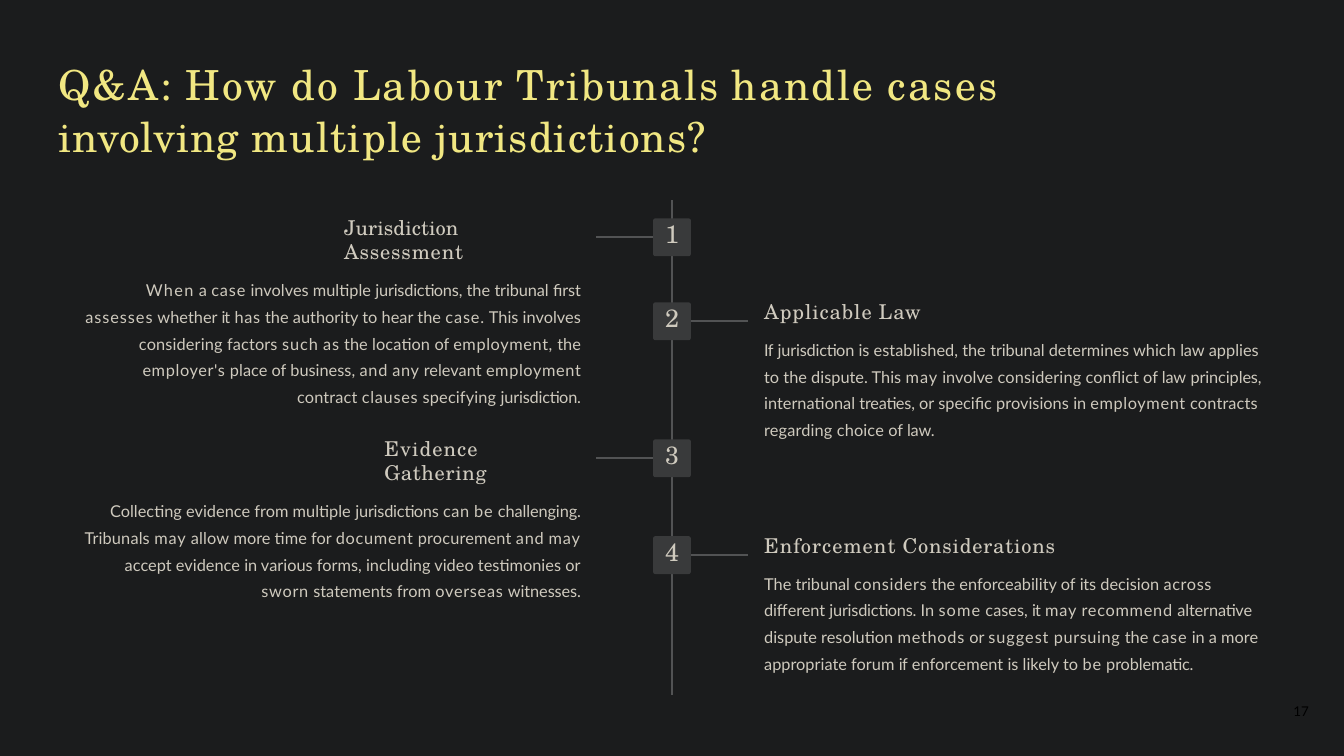
from dataclasses import dataclass
from itertools import groupby

from pptx import Presentation
from pptx.dml.color import RGBColor
from pptx.enum.shapes import MSO_CONNECTOR as Connector, MSO_SHAPE as Shape
from pptx.enum.text import MSO_ANCHOR as Anchor, PP_ALIGN as Align
from pptx.oxml import parse_xml
from pptx.oxml.ns import nsdecls
from pptx.util import Pt


@dataclass(frozen=True)
class TextStyle:
    font: str
    size: float
    color: str


@dataclass(frozen=True)
class Theme:
    background: str = "1B1C1D"
    line: str = "525354"
    node: str = "393A3B"
    title: TextStyle = TextStyle("TeX Gyre Schola", 35.5, "F1E782")
    number: TextStyle = TextStyle("TeX Gyre Schola", 21.5, "CFCABE")
    heading: TextStyle = TextStyle("TeX Gyre Schola", 17.5, "CFCABE")
    body: TextStyle = TextStyle("Lato", 14, "CFCABE")
    page: TextStyle = TextStyle("Lato", 11.5, "000000")


@dataclass(frozen=True)
class Topic:
    number: str
    top: float
    on_left: bool
    heading: str
    body: str
    closing: str = ""  # last line, set as its own paragraph
    heading_indent: float = 0
    first_indent: float = 0


THEME = Theme()
WIDTH, HEIGHT = 1152, 648
SPINE_X, SPINE_TOP, SPINE_BOTTOM = 576, 171.4, 595.4
NODE, BRANCH_REACH = 32.4, 64.8
TEXT_GAP, TEXT_WIDTH = 78, 438

TOPICS = [
    Topic("1", 187.2, True, "Jurisdiction Assessment",
          "When a case involves multiple jurisdictions, the tribunal first assesses whether "
          "it has the authority to hear the case. This involves considering factors such as "
          "the location of employment, the employer's place of business, and any relevant "
          "employment",
          "contract clauses specifying jurisdiction.", 235, 49.7),
    Topic("2", 259.2, False, "Applicable Law",
          "If jurisdiction is established, the tribunal determines which law applies to the "
          "dispute. This may involve considering conflict of law principles, international "
          "treaties, or specific provisions in employment contracts regarding choice of law."),
    Topic("3", 376.6, True, "Evidence Gathering",
          "Collecting evidence from multiple jurisdictions can be challenging. Tribunals may "
          "allow more time for document procurement and may accept evidence in various forms, "
          "including video testimonies or",
          "sworn statements from overseas witnesses.", 269.5, 10.8),
    Topic("4", 459.6, False, "Enforcement Considerations",
          "The tribunal considers the enforceability of its decision across different "
          "jurisdictions. In some cases, it may recommend alternative dispute resolution "
          "methods or suggest pursuing the case in a more appropriate forum if enforcement "
          "is likely to be problematic."),
]


def by_word(groups: dict[float, str]) -> dict[str, float]:
    return {word: value for value, words in groups.items() for word in words.split()}


# Letter spacing in points, by word
TITLE_TRACKING = by_word({
    0.7: "involving", 1: "jurisdictions", 1.1: "multiple", 1.4: "Tribunals",
    1.7: "Q&A", 1.8: "handle", 2: "Labour", 2.2: "How cases", 2.4: "do"})
TEXT_TRACKING = by_word({
    -0.9: "it", -0.6: "If if", -0.2: "jurisdictions jurisdiction law treaties in its",
    -0.1: "tribunal first principles challenging different alternative witnesses problematic",
    0.1: "Jurisdiction considering factors location contract specifying contracts regarding "
         "choice Tribunals allow procurement",
    0.5: "employment employer's any can considers across pursuing",
    0.6: "has and clauses document sworn overseas recommend methods Gathering",
    0.7: "case as may be Assessment Considerations",
    0.8: "assesses such suggest Applicable", 0.9: "some Evidence Law Enforcement", 1.1: "When"})


def add_words(paragraph, text: str, style: TextStyle, tracking: dict[str, float]) -> None:
    """Write text as runs of one letter spacing; the gaps between words have none."""
    pieces = [piece for word in text.split() for piece in (word, " ")][:-1]
    for spacing, group in groupby(pieces, lambda piece: tracking.get(piece.strip(".,:?"), 0)):
        run = paragraph.add_run()
        run.text = "".join(group)
        run.font.color.rgb = RGBColor.from_string(style.color)
        for name, value in {"name": style.font, "size": Pt(style.size)}.items():
            setattr(run.font, name, value)
        run._r.get_or_add_rPr().set("spc", str(round(spacing * 100)))


def format_paragraph(paragraph, formats: dict, left: float = 0, right: float = 0,
                     first: float = 0) -> None:
    for name, value in formats.items():
        setattr(paragraph, name, value)
    for name, value in {"marL": left, "marR": right, "indent": first}.items():
        paragraph._p.get_or_add_pPr().set(name, str(int(Pt(value))))


def set_frame(shape, **formats):
    frame = shape.text_frame
    defaults = {"word_wrap": True, "margin_left": 0, "margin_top": Pt(0.7),
                "margin_right": 0, "margin_bottom": 0}
    for name, value in (defaults | formats).items():
        setattr(frame, name, value)
    return frame


def add_text_box(slide, left: float, top: float, width: float, height: float):
    return set_frame(slide.shapes.add_textbox(Pt(left), Pt(top), Pt(width), Pt(height)))


def add_block(slide, kind: Shape, left: float, top: float, width: float, height: float,
              color: str):
    block = slide.shapes.add_shape(kind, Pt(left), Pt(top), Pt(width), Pt(height))
    block.shadow.inherit = False
    block.fill.solid()
    block.fill.fore_color.rgb = RGBColor.from_string(color)
    block.line.fill.background()
    return block


def add_line(slide, start: tuple[float, float], end: tuple[float, float], width: float):
    line = slide.shapes.add_connector(Connector.STRAIGHT, *(Pt(n) for n in start + end))
    line.line.color.rgb = RGBColor.from_string(THEME.line)
    line.line.width = Pt(width)
    line._element.spPr.append(parse_xml(f"<a:effectLst {nsdecls('a')}/>"))
    return line


def add_node(slide, topic: Topic) -> None:
    """Numbered square with its branch line."""
    node = add_block(slide, Shape.ROUNDED_RECTANGLE, SPINE_X - NODE / 2, topic.top,
                     NODE, NODE, THEME.node)
    node.adjustments[0] = 0.06
    frame = set_frame(node, vertical_anchor=Anchor.MIDDLE, margin_bottom=Pt(6.5))
    format_paragraph(frame.paragraphs[0], {"alignment": Align.CENTER})
    add_words(frame.paragraphs[0], topic.number, THEME.number, {})

    side = -1 if topic.on_left else 1
    middle = topic.top + NODE / 2
    branch = add_line(slide, (SPINE_X + side * NODE / 2, middle),
                      (SPINE_X + side * BRANCH_REACH, middle), 2)
    branch.begin_connect(node, 1 if topic.on_left else 3)


def add_topic_text(slide, topic: Topic) -> None:
    left = SPINE_X - TEXT_GAP - TEXT_WIDTH if topic.on_left else SPINE_X + TEXT_GAP + 1
    frame = add_text_box(slide, left, topic.top - 3.6, TEXT_WIDTH,
                         146 if topic.number == "1" else 123)
    alignment = Align.RIGHT if topic.on_left else Align.LEFT
    heading = frame.paragraphs[0]
    format_paragraph(heading, {"alignment": Align.LEFT}, left=topic.heading_indent,
                     right=40 if topic.on_left else 0)
    add_words(heading, topic.heading, THEME.heading, TEXT_TRACKING)

    body = frame.add_paragraph()
    format_paragraph(body, {"alignment": alignment, "line_spacing": 1.36,
                            "space_before": Pt(8.2)}, first=topic.first_indent)
    add_words(body, topic.body, THEME.body, TEXT_TRACKING)
    if topic.closing:
        closing = frame.add_paragraph()
        format_paragraph(closing, {"alignment": alignment, "space_before": Pt(6.1)})
        add_words(closing, topic.closing, THEME.body, TEXT_TRACKING)


def main() -> None:
    presentation = Presentation()
    presentation.slide_width, presentation.slide_height = Pt(WIDTH), Pt(HEIGHT)
    slide = presentation.slides.add_slide(presentation.slide_layouts[6])
    add_block(slide, Shape.RECTANGLE, 0, 0, WIDTH, HEIGHT, THEME.background)

    # Title
    title = add_text_box(slide, 50.4, 47.5, 938, 92).paragraphs[0]
    format_paragraph(title, {"line_spacing": 1.05})
    add_words(title, "Q&A: How do Labour Tribunals handle cases involving multiple "
                     "jurisdictions?", THEME.title, TITLE_TRACKING)

    # Timeline
    add_line(slide, (SPINE_X, SPINE_TOP), (SPINE_X, SPINE_BOTTOM), 1.5)
    for topic in TOPICS:
        add_node(slide, topic)
        add_topic_text(slide, topic)

    # Page number
    page = add_text_box(slide, 1082, 602, 40, 15).paragraphs[0]
    format_paragraph(page, {"alignment": Align.RIGHT})
    add_words(page, "17", THEME.page, {})
    presentation.save("out.pptx")


if __name__ == "__main__":
    main()
